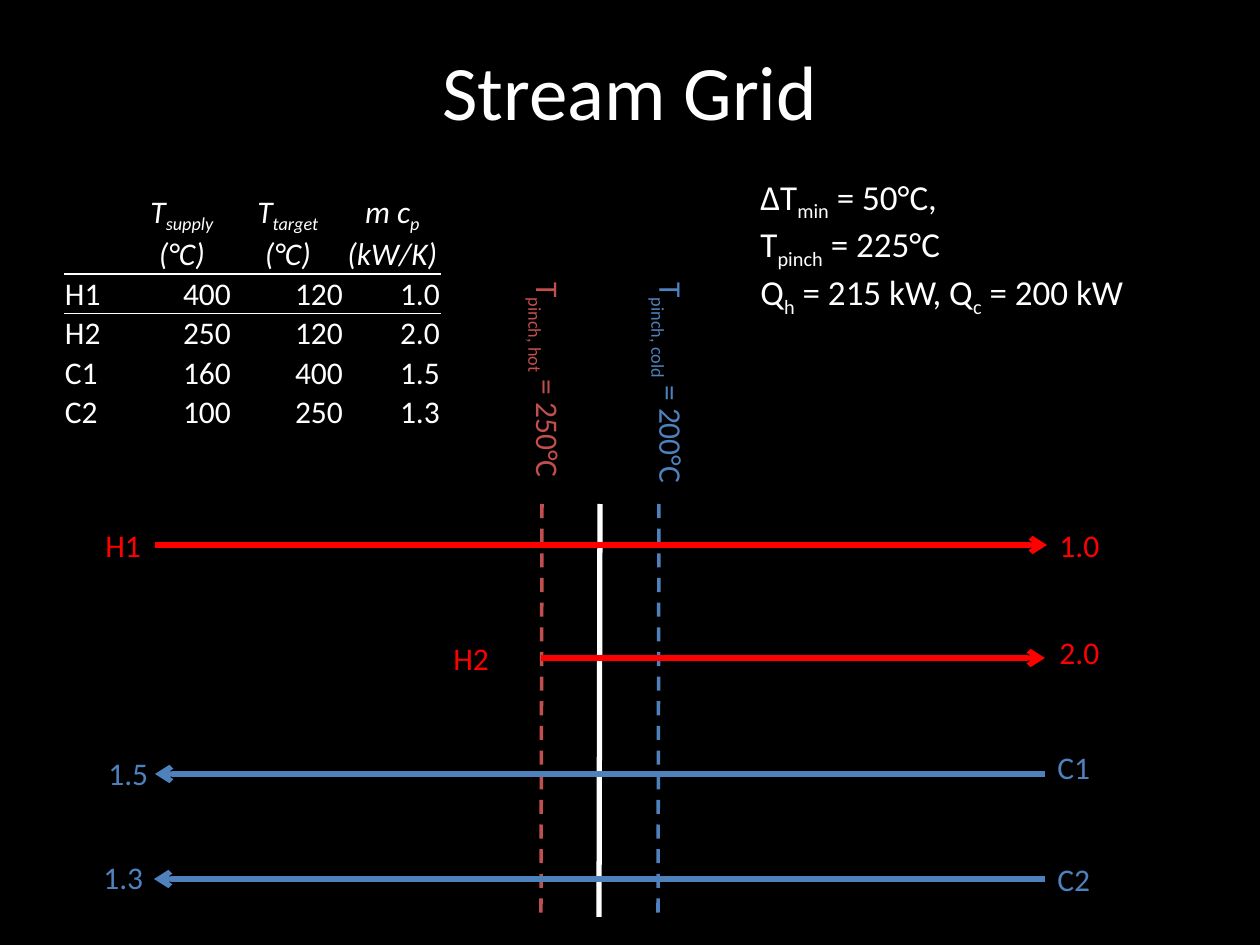
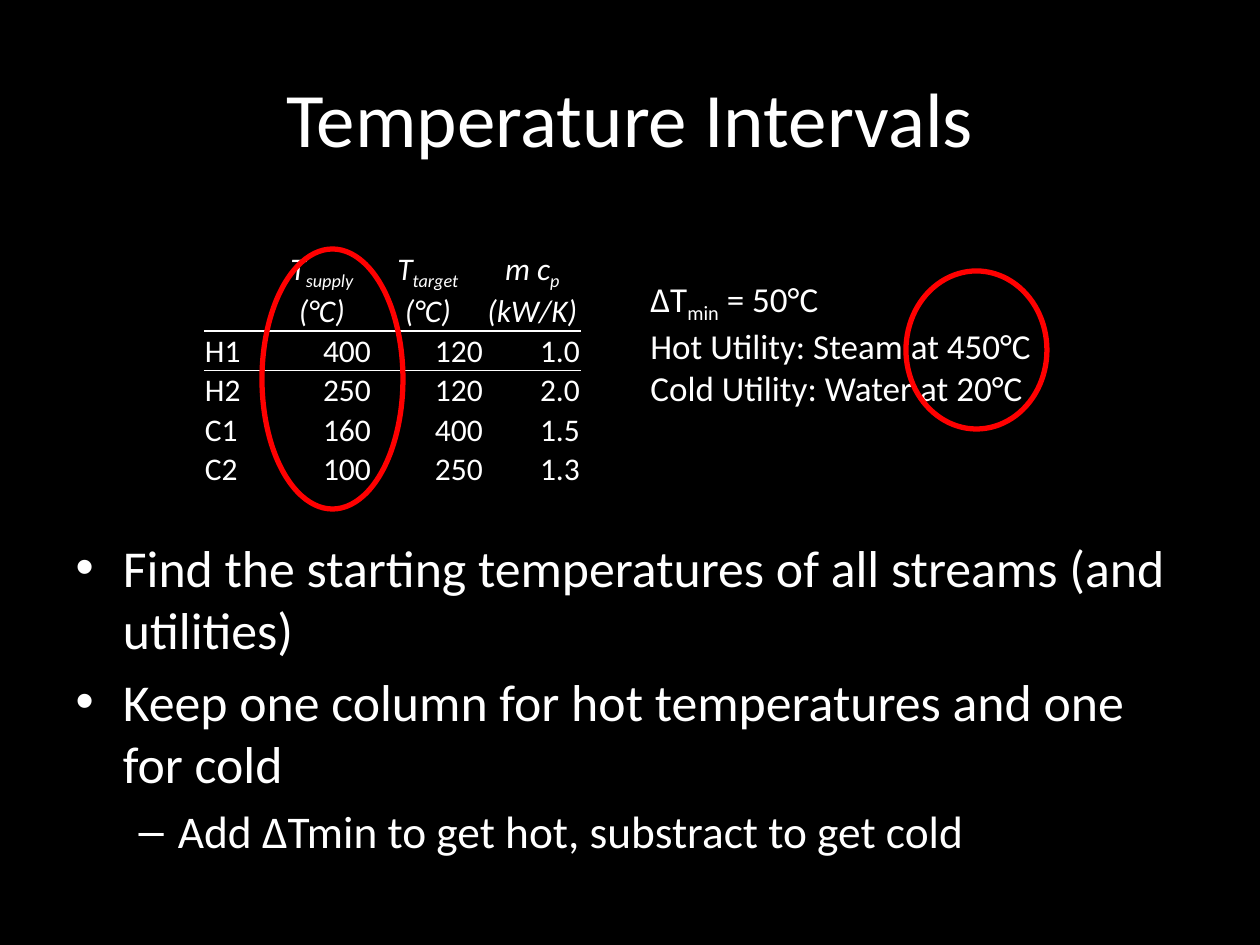
from dataclasses import dataclass

from pptx import Presentation
from pptx.dml.color import RGBColor
from pptx.enum.dml import MSO_LINE
from pptx.enum.shapes import MSO_CONNECTOR, MSO_SHAPE
from pptx.enum.text import MSO_ANCHOR, MSO_AUTO_SIZE, PP_ALIGN
from pptx.oxml.ns import qn
from pptx.oxml.xmlchemy import OxmlElement
from pptx.shapes.autoshape import Shape
from pptx.shapes.connector import Connector
from pptx.slide import Slide
from pptx.table import _Cell
from pptx.text.text import TextFrame, _Paragraph
from pptx.util import Emu, Pt

PX_PER_INCH = 126
FONT = "Calibri"
BLACK = RGBColor(0x00, 0x00, 0x00)
WHITE = RGBColor(0xFF, 0xFF, 0xFF)
RED = RGBColor(0xFF, 0x00, 0x00)
COLD_BLUE = RGBColor(0x4F, 0x81, 0xBD)
HOT_RED = RGBColor(0xC0, 0x50, 0x4D)
NO_TABLE_STYLE = "{2D5ABB26-0587-4C30-8999-92F81FD0307C}"
LEFT_SIDE, RIGHT_SIDE = 1, 3

# Even pieces sit on the baseline, odd pieces are subscripts.
Pieces = tuple[str, ...]


@dataclass(frozen=True)
class Box:
    left: int
    top: int
    width: int
    height: int

    def emu(self) -> tuple[Emu, Emu, Emu, Emu]:
        return px(self.left), px(self.top), px(self.width), px(self.height)


@dataclass(frozen=True)
class Label:
    text: str
    box: Box
    joined: bool = False


@dataclass(frozen=True)
class Stream:
    color: RGBColor
    start: int
    end: int
    y: int
    source: Label
    target: Label


@dataclass(frozen=True)
class PinchLine:
    x: int
    color: RGBColor
    weight: int
    dashed: bool = True


@dataclass(frozen=True)
class PinchLabel:
    pieces: Pieces
    box: Box
    color: RGBColor


@dataclass(frozen=True)
class Bullet:
    text: str
    level: int
    size: float


STREAM_COLUMNS = (68, 100, 112, 97)
STREAM_ROWS = (72, 35, 35, 35, 35)
STREAM_HEADINGS: tuple[Pieces, ...] = (
    (),
    ("T", "supply", " (°C)"),
    ("T", "target", " (°C)"),
    ("m c", "p", " (kW/K)"),
)
STREAM_DATA = (
    ("H1", "400", "120", "1.0"),
    ("H2", "250", "120", "2.0"),
    ("C1", "160", "400", "1.5"),
    ("C2", "100", "250", "1.3"),
)

PINCH_TOP, PINCH_BOTTOM = 504, 917
PINCH_LINES = (
    PinchLine(600, WHITE, 3, dashed=False),
    PinchLine(659, COLD_BLUE, 2),
    PinchLine(542, HOT_RED, 2),
)
PINCH_LABELS = (
    PinchLabel(("T", "pinch, cold", " = 200°C"), Box(634, 270, 63, 228), COLD_BLUE),
    PinchLabel(("T", "pinch, hot", " = 250°C"), Box(511, 270, 63, 222), HOT_RED),
)
STREAMS = (
    Stream(RED, 155, 1046, 545,
           Label("H1", Box(93, 520, 62, 50), joined=True),
           Label("1.0", Box(1047, 520, 66, 50), joined=True)),
    Stream(RED, 541, 1045, 658,
           Label("H2", Box(441, 633, 62, 50)),
           Label("2.0", Box(1047, 627, 66, 50))),
    Stream(COLD_BLUE, 1045, 155, 774,
           Label("C1", Box(1045, 742, 58, 50)),
           Label("1.5", Box(96, 748, 66, 50))),
    Stream(COLD_BLUE, 1043, 154, 879,
           Label("C2", Box(1045, 854, 58, 50), joined=True),
           Label("1.3", Box(91, 852, 66, 50))),
)

PINCH_RESULTS: tuple[Pieces, ...] = (
    ("∆T", "min", " = 50°C,"),
    ("T", "pinch", " = 225°C"),
    ("Q", "h", " = 215 kW, Q", "c", " = 200 kW"),
)
UTILITIES: tuple[Pieces, ...] = (
    ("∆T", "min", " = 50°C"),
    ("Hot Utility: Steam at 450°C",),
    ("Cold Utility: Water at 20°C",),
)
INTERVAL_STEPS = (
    Bullet("Find the starting temperatures of all streams (and utilities)", 0, 29.6),
    Bullet("Keep one column for hot temperatures and one for cold", 0, 29.6),
    Bullet("Add ∆Tmin to get hot, substract to get cold", 1, 25.9),
)
START_TEMPERATURE_RINGS = (Box(262, 249, 141, 260), Box(906, 271, 141, 158))


def px(length: int) -> Emu:
    return Emu(round(length * 914400 / PX_PER_INCH))


def write(paragraph: _Paragraph, pieces: Pieces, size: float,
          color: RGBColor = WHITE, italic: bool = False) -> None:
    for index, piece in enumerate(pieces):
        run = paragraph.add_run()
        run.text = piece
        run.font.name = FONT
        run.font.size = Pt(size)
        run.font.color.rgb = color
        run.font.italic = italic
        if index % 2:
            run._r.get_or_add_rPr().set("baseline", "-25000")


def next_paragraph(frame: TextFrame, index: int) -> _Paragraph:
    return frame.add_paragraph() if index else frame.paragraphs[0]


def add_text(slide: Slide, box: Box, lines: tuple[Pieces, ...], size: int,
             color: RGBColor = WHITE, wrap: bool = False) -> Shape:
    text_box = slide.shapes.add_textbox(*box.emu())
    frame = text_box.text_frame
    frame.word_wrap = wrap
    frame.auto_size = MSO_AUTO_SIZE.SHAPE_TO_FIT_TEXT
    for index, pieces in enumerate(lines):
        write(next_paragraph(frame, index), pieces, size, color)
    return text_box


def place(placeholder: Shape, box: Box) -> TextFrame:
    placeholder.left, placeholder.top, placeholder.width, placeholder.height = box.emu()
    frame = placeholder.text_frame
    frame.auto_size = MSO_AUTO_SIZE.NONE
    return frame


def set_title(slide: Slide, title: str, top: int) -> None:
    frame = place(slide.shapes.title, Box(63, top, 1134, 158))
    frame.vertical_anchor = MSO_ANCHOR.MIDDLE
    frame.paragraphs[0].alignment = PP_ALIGN.CENTER
    write(frame.paragraphs[0], (title,), 44)


def add_rule(cell: _Cell, side: str) -> None:
    rule = OxmlElement(f"a:{side}")
    rule.set("w", str(Pt(1)))
    fill = OxmlElement("a:solidFill")
    color = OxmlElement("a:srgbClr")
    color.set("val", str(WHITE))
    fill.append(color)
    rule.append(fill)
    cell._tc.get_or_add_tcPr().append(rule)


def add_stream_table(slide: Slide, left: int, top: int) -> None:
    box = Box(left, top, sum(STREAM_COLUMNS), sum(STREAM_ROWS))
    table = slide.shapes.add_table(len(STREAM_ROWS), len(STREAM_COLUMNS), *box.emu()).table
    table.first_row = table.horz_banding = False
    table._tbl.tblPr.find(qn("a:tableStyleId")).text = NO_TABLE_STYLE
    for column, width in zip(table.columns, STREAM_COLUMNS):
        column.width = px(width)
    for row, height in zip(table.rows, STREAM_ROWS):
        row.height = px(height)
    entries = (STREAM_HEADINGS, *(tuple((value,) for value in row) for row in STREAM_DATA))
    for row_index, row in enumerate(entries):
        heading = row_index == 0
        for column_index, pieces in enumerate(row):
            cell = table.cell(row_index, column_index)
            cell.margin_left = cell.margin_right = cell.margin_top = px(1)
            cell.margin_bottom = 0
            cell.vertical_anchor = MSO_ANCHOR.MIDDLE if heading else MSO_ANCHOR.BOTTOM
            paragraph = cell.text_frame.paragraphs[0]
            if heading:
                paragraph.alignment = PP_ALIGN.CENTER
            elif column_index:
                paragraph.alignment = PP_ALIGN.RIGHT
            write(paragraph, pieces, 18, italic=heading)
            if row_index == 1:
                add_rule(cell, "lnT")
            if row_index <= 1:
                add_rule(cell, "lnB")
            cell.fill.background()


def add_line(slide: Slide, start: tuple[int, int], end: tuple[int, int], color: RGBColor,
             weight: int, dashed: bool = False, arrow: bool = False) -> Connector:
    line = slide.shapes.add_connector(
        MSO_CONNECTOR.STRAIGHT, *(px(value) for value in (*start, *end)))
    line.line.color.rgb = color
    line.line.width = Pt(weight)
    if dashed:
        line.line.dash_style = MSO_LINE.DASH
    if arrow:
        head = OxmlElement("a:tailEnd")
        head.set("type", "arrow")
        line.line._get_or_add_ln().append(head)
    line._element.spPr.append(OxmlElement("a:effectLst"))
    return line


def add_stream(slide: Slide, stream: Stream) -> None:
    source, target = (add_text(slide, label.box, ((label.text,),), 18, stream.color)
                      for label in (stream.source, stream.target))
    arrow = add_line(slide, (stream.start, stream.y), (stream.end, stream.y),
                     stream.color, 3, arrow=True)
    rightward = stream.start < stream.end
    if stream.source.joined:
        arrow.begin_connect(source, RIGHT_SIDE if rightward else LEFT_SIDE)
    if stream.target.joined:
        arrow.end_connect(target, LEFT_SIDE if rightward else RIGHT_SIDE)


def add_ring(slide: Slide, box: Box) -> None:
    ring = slide.shapes.add_shape(MSO_SHAPE.OVAL, *box.emu())
    ring.shadow.inherit = False
    ring.fill.background()
    ring.line.color.rgb = RED
    ring.line.width = Pt(3)


def build_stream_grid(slide: Slide) -> None:
    set_title(slide, "Stream Grid", 11)
    add_stream_table(slide, 64, 192)
    add_text(slide, Box(748, 169, 394, 140), PINCH_RESULTS, 20)
    for pinch in PINCH_LINES:
        add_line(slide, (pinch.x, PINCH_TOP), (pinch.x - 1, PINCH_BOTTOM),
                 pinch.color, pinch.weight, pinch.dashed)
    for label in PINCH_LABELS:
        text_box = add_text(slide, label.box, (label.pieces,), 18, label.color)
        text_box.text_frame._bodyPr.set("vert", "vert")
    for stream in STREAMS:
        add_stream(slide, stream)


def build_temperature_intervals(slide: Slide) -> None:
    set_title(slide, "Temperature Intervals", 38)
    add_stream_table(slide, 204, 249)
    add_text(slide, Box(638, 271, 410, 140), UTILITIES, 20, wrap=True)
    steps = place(slide.placeholders[1], Box(63, 529, 1134, 315))
    for index, step in enumerate(INTERVAL_STEPS):
        paragraph = next_paragraph(steps, index)
        paragraph.level = step.level
        write(paragraph, (step.text,), step.size)
    for ring in START_TEMPERATURE_RINGS:
        add_ring(slide, ring)


def main() -> None:
    deck = Presentation()
    deck.slide_width, deck.slide_height = px(1260), px(945)
    background = deck.slide_master.background.fill
    background.solid()
    background.fore_color.rgb = BLACK
    build_stream_grid(deck.slides.add_slide(deck.slide_layouts.get_by_name("Title Only")))
    build_temperature_intervals(
        deck.slides.add_slide(deck.slide_layouts.get_by_name("Title and Content")))
    deck.save("out.pptx")


if __name__ == "__main__":
    main()
